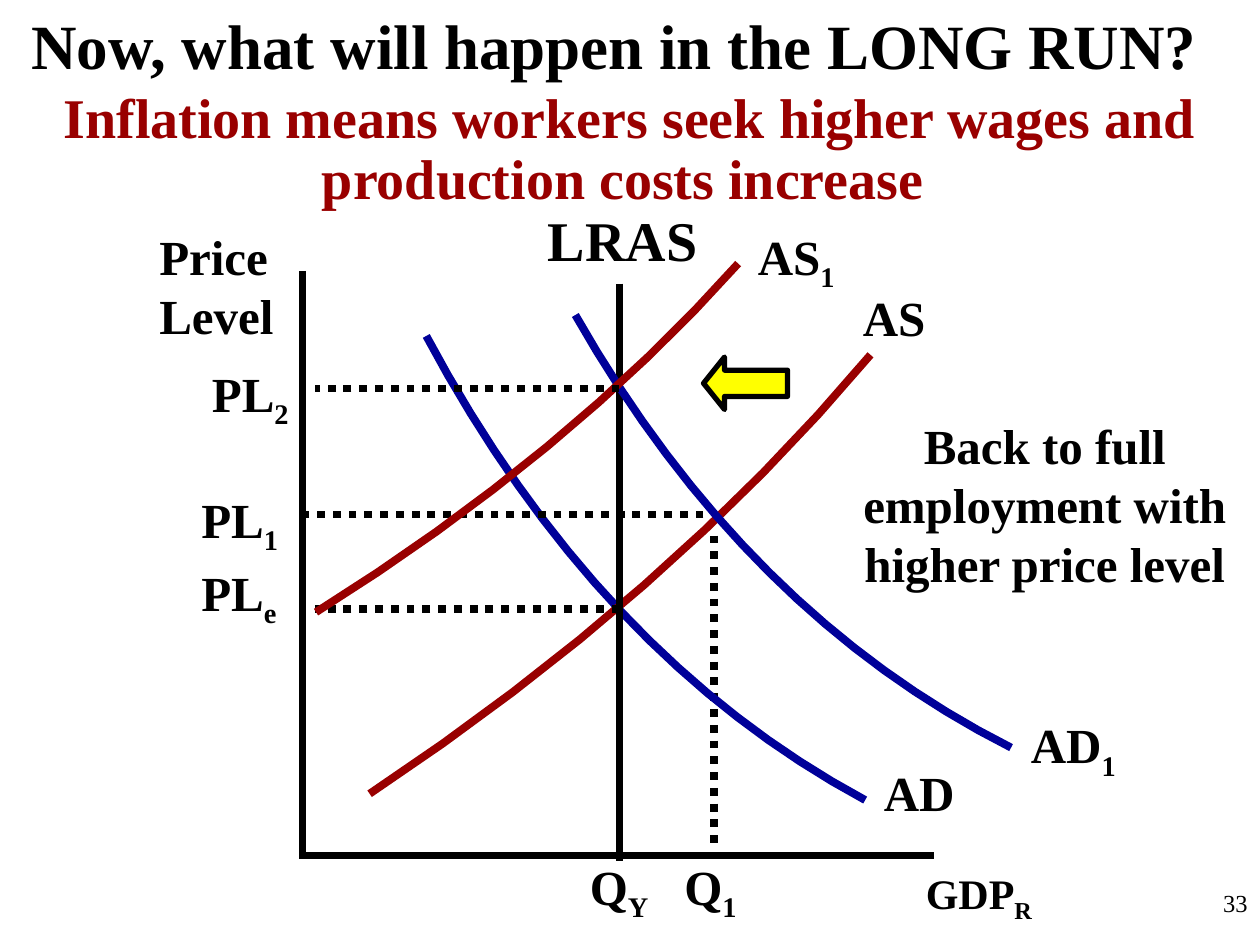
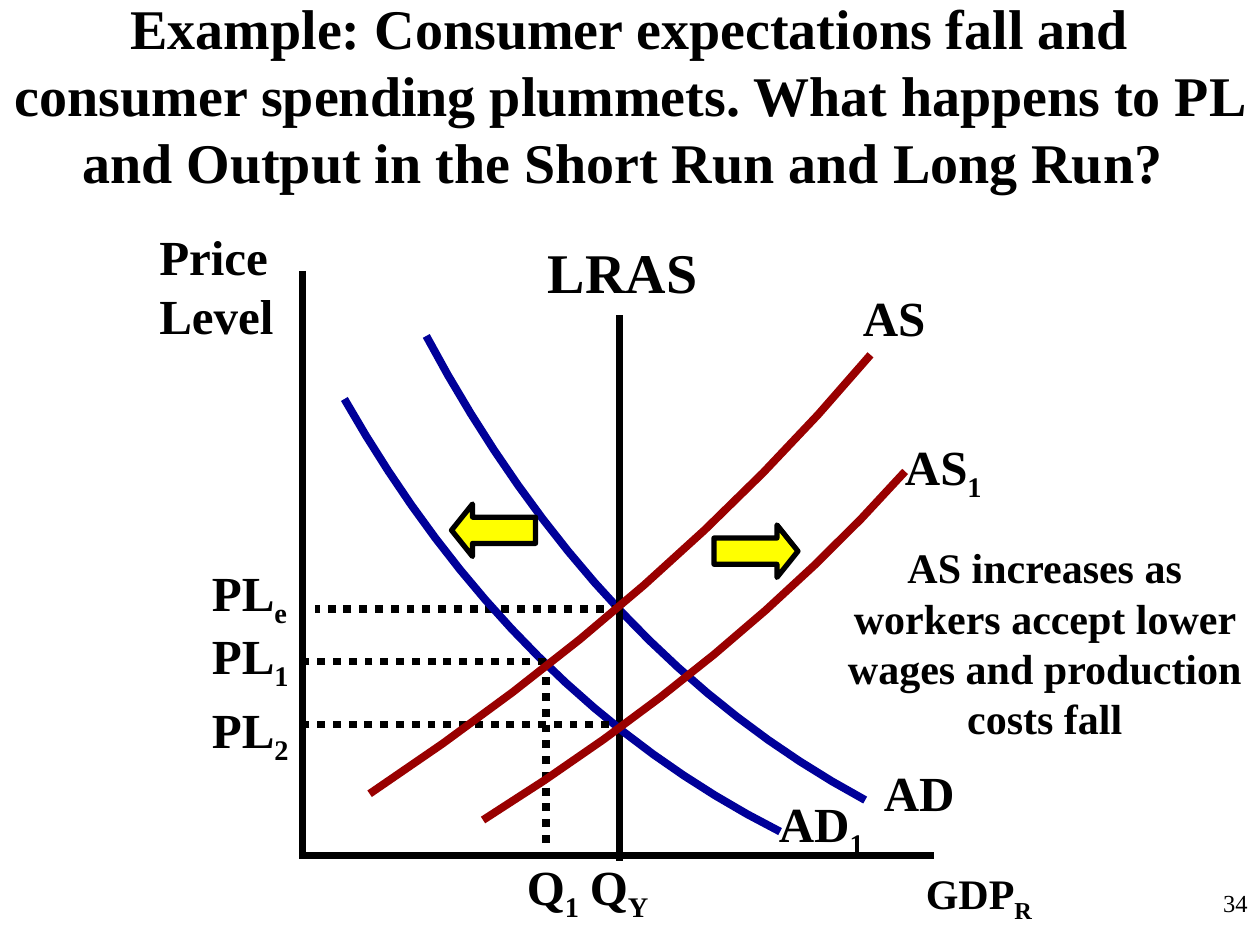
from dataclasses import dataclass, replace
from functools import singledispatch

from lxml.etree import SubElement
from pptx import Presentation
from pptx.dml.color import RGBColor
from pptx.enum.dml import MSO_LINE
from pptx.enum.shapes import MSO_CONNECTOR, MSO_SHAPE
from pptx.enum.text import MSO_ANCHOR, MSO_AUTO_SIZE, PP_ALIGN
from pptx.oxml.ns import qn
from pptx.slide import Slide
from pptx.util import Emu, Inches, Pt

# The slide is a grid of 120 columns by 90 rows, twelve to the inch.
COLUMNS, ROWS = 120, 90
WIDTH, HEIGHT = Inches(10), Inches(7.5)
FONT = "Times New Roman"
BLACK, WHITE, RED, BLUE, YELLOW = "000000", "FFFFFF", "990000", "000099", "FFFF00"
CURVE_WEIGHT, AXIS_WEIGHT, ARROW_WEIGHT = 4.5, 4, 3


@dataclass(frozen=True)
class Label:
    text: str
    column: float
    row: float
    columns: float
    subscript: str = ""
    size: int = 28
    lines: int = 1
    color: str = BLACK
    align: PP_ALIGN = PP_ALIGN.LEFT
    spacing: float = 1.0
    bold: bool = True


@dataclass(frozen=True)
class Line:
    start: tuple[float, float]
    end: tuple[float, float]
    weight: float = CURVE_WEIGHT
    dotted: bool = False


@dataclass(frozen=True)
class Curve:
    """A quadratic curve; slope is its starting speed along each axis."""
    column: float
    row: float
    columns: float
    rows: float
    color: str
    slope: tuple[float, float]
    segments: int


@dataclass(frozen=True)
class ShiftArrow:
    column: float
    row: float
    leftward: bool = False


Item = Label | Line | Curve | ShiftArrow


def rgb(color: str) -> RGBColor:
    return RGBColor.from_string(color)


def across(columns: float) -> Emu:
    return Emu(round(WIDTH * columns / COLUMNS))


def down(rows: float) -> Emu:
    return Emu(round(HEIGHT * rows / ROWS))


@singledispatch
def draw(item: Item, slide: Slide) -> None:
    raise TypeError(item)


@draw.register
def draw_label(label: Label, slide: Slide) -> None:
    height = Inches(0.1) + Pt(label.size * 1.2 * label.spacing * label.lines)
    box = slide.shapes.add_textbox(across(label.column), down(label.row),
                                   across(label.columns), height)
    frame = box.text_frame
    frame.word_wrap = label.lines > 1 or label.align != PP_ALIGN.LEFT
    frame.auto_size = MSO_AUTO_SIZE.SHAPE_TO_FIT_TEXT
    frame.vertical_anchor = MSO_ANCHOR.TOP
    paragraph = frame.paragraphs[0]
    paragraph.alignment = label.align
    paragraph.line_spacing = label.spacing
    for text, baseline in ((label.text, 0), (label.subscript, -25000)):
        if not text:
            continue
        run = paragraph.add_run()
        run.text = text
        run.font.name = FONT
        run.font.size = Pt(label.size)
        run.font.bold = label.bold
        run.font.color.rgb = rgb(label.color)
        if baseline:
            run._r.get_or_add_rPr().set("baseline", str(baseline))


@draw.register
def draw_line(line: Line, slide: Slide) -> None:
    connector = slide.shapes.add_connector(
        MSO_CONNECTOR.STRAIGHT, across(line.start[0]), down(line.start[1]),
        across(line.end[0]), down(line.end[1]))
    connector.line.color.rgb = rgb(BLACK)
    connector.line.width = Pt(line.weight)
    if line.dotted:
        connector.line.dash_style = MSO_LINE.ROUND_DOT
    SubElement(connector._element.spPr, qn("a:effectLst"))


@draw.register
def draw_curve(curve: Curve, slide: Slide) -> None:
    def share(slope: float, step: int) -> float:
        time = step / curve.segments
        return slope * time + (1 - slope) * time ** 2

    points = [(across(curve.column + curve.columns * share(curve.slope[0], step)),
               down(curve.row + curve.rows * share(curve.slope[1], step)))
              for step in range(curve.segments + 1)]
    builder = slide.shapes.build_freeform(*points[0])
    builder.add_line_segments(points[1:], close=False)
    shape = builder.convert_to_shape()
    shape.shadow.inherit = False
    shape.fill.background()
    shape.line.color.rgb = rgb(curve.color)
    shape.line.width = Pt(CURVE_WEIGHT)


@draw.register
def draw_shift_arrow(arrow: ShiftArrow, slide: Slide) -> None:
    shape = slide.shapes.add_shape(MSO_SHAPE.RIGHT_ARROW, across(arrow.column),
                                   down(arrow.row), across(8), down(5))
    shape.adjustments[0], shape.adjustments[1] = 0.5, 0.4
    shape.rotation = 180 if arrow.leftward else 0
    shape.shadow.inherit = False
    shape.fill.solid()
    shape.fill.fore_color.rgb = rgb(YELLOW)
    shape.line.color.rgb = rgb(BLACK)
    shape.line.width = Pt(ARROW_WEIGHT)


def centered(text: str, column: float, row: float, columns: float,
             size: int, lines: int) -> Label:
    return Label(text, column, row, columns, size=size, lines=lines,
                 align=PP_ALIGN.CENTER)


def price(subscript: str, column: float, row: float) -> Label:
    return Label("PL", column, row, 10, subscript)


def output(subscript: str, column: float) -> Label:
    return Label("Q", column, 81, 8, subscript)


def dotted(start: tuple[float, float], end: tuple[float, float]) -> Line:
    return Line(start, end, dotted=True)


def long_run_supply(top: float) -> list[Item]:
    return [Line((FULL_OUTPUT, top), (FULL_OUTPUT, 82)),
            Label("LRAS", 51, top - 8, 16.7, size=32)]


FULL_OUTPUT = 59
DEMAND = Curve(40.6, 32, 41.8, 44.2, BLUE, (0.78, 1.38), 16)
SUPPLY = Curve(35.2, 75.6, 47.7, -41.8, RED, (1.19, 0.9), 8)
SHIFTED_DEMAND = replace(DEMAND, columns=41.5, rows=41.2)
SHIFTED_SUPPLY = replace(SUPPLY, columns=40.2, rows=-33.2)

FRAME: list[Item] = [
    Line((28.8, 25.8), (28.8, 81.8), AXIS_WEIGHT),
    Line((28.6, 81.5), (89, 81.5), AXIS_WEIGHT),
    Label("Price Level", 14, 21, 18, lines=2),
    Label("GDP", 87, 82, 12.7, "R", size=24),
    Label("AD", 83, 72, 9.1),
    Label("AS", 81, 26.75, 8.4),
    output("Y", 55),
    DEMAND,
]

INFLATION: list[Item] = [
    dotted((68, 51), (68, 81)),
    *FRAME,
    SUPPLY,
    centered("Now, what will happen in the LONG RUN?", 0, 0, 117, 36, 1),
    replace(centered("Inflation means workers seek higher wages and "
                     "production costs increase ", 4, 8, 112, 32, 2),
            color=RED, spacing=0.9),
    *long_run_supply(27),
    dotted((FULL_OUTPUT, 58), (30, 58)),
    replace(SHIFTED_DEMAND, column=54.8, row=30),
    Label("AD", 97, 67.5, 10.8, "1"),
    dotted((67, 49), (29, 49)),
    price("e", 18, 53),
    price("1", 18, 46),
    output("1", 64),
    replace(SHIFTED_SUPPLY, column=30.1, row=58.3),
    Label("AS", 71, 21, 10, "1"),
    ShiftArrow(67, 34, leftward=True),
    dotted((FULL_OUTPUT, 37), (30, 37)),
    price("2", 19, 34),
    centered("Back to full employment with higher price level", 79, 39, 41, 28, 3),
]

RECESSION: list[Item] = [
    *FRAME,
    centered("Example: Consumer expectations fall and consumer spending "
             "plummets. What happens to PL and Output in the Short Run "
             "and Long Run? ", 0, -1.2, 120, 32, 3),
    *long_run_supply(30),
    dotted((FULL_OUTPUT, 58), (30, 58)),
    dotted((52, 63), (52, 81)),
    replace(SHIFTED_DEMAND, column=32.8, row=38),
    Label("AD", 73, 75, 10.8, "1"),
    dotted((52, 63), (29, 63)),
    price("1", 19, 59),
    output("1", 49),
    Label("AS", 85, 41, 10, "1"),
    price("2", 19, 66),
    replace(SHIFTED_SUPPLY, column=46, row=78.1),
    ShiftArrow(43, 48, leftward=True),
    price("e", 19, 53),
    dotted((58, 69), (29, 69)),
    SUPPLY,
    ShiftArrow(68, 50),
    centered("AS increases as workers accept lower wages and production "
             "costs fall", 79, 51, 41, 24, 4),
]


def main() -> None:
    presentation = Presentation()
    presentation.slide_width, presentation.slide_height = WIDTH, HEIGHT
    for number, items in enumerate((INFLATION, RECESSION), start=33):
        slide = presentation.slides.add_slide(presentation.slide_layouts[6])
        slide.background.fill.solid()
        slide.background.fill.fore_color.rgb = rgb(WHITE)
        page_number = Label(str(number), 95, 84, 25, size=14,
                            align=PP_ALIGN.RIGHT, bold=False)
        for item in (*items, page_number):
            draw(item, slide)
    presentation.save("out.pptx")


if __name__ == "__main__":
    main()
